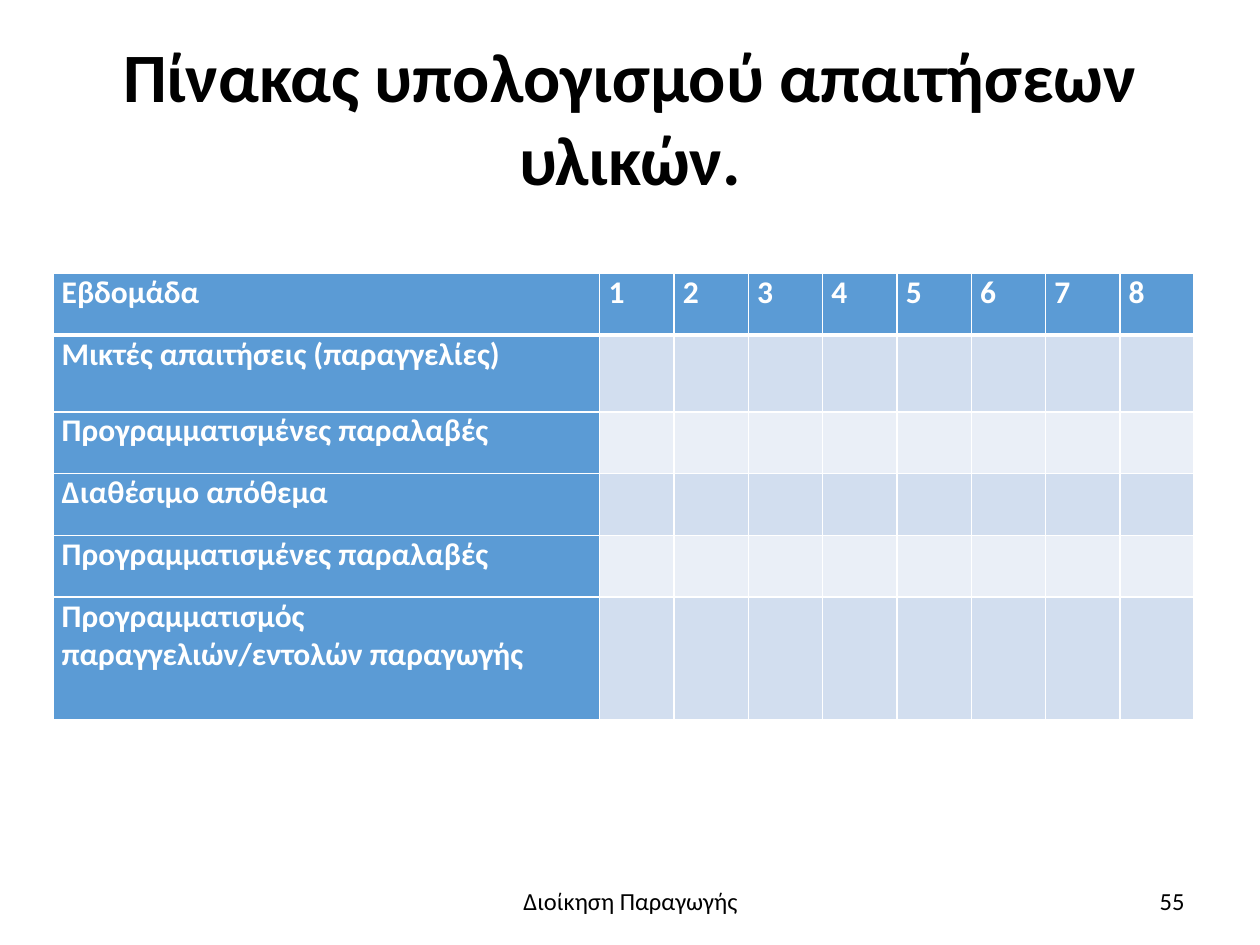
"""Build the material requirements planning table slide."""
from lxml.etree import SubElement
from pptx import Presentation
from pptx.dml.color import RGBColor
from pptx.enum.text import MSO_ANCHOR, PP_ALIGN
from pptx.oxml.ns import qn
from pptx.util import Inches, Pt

BLACK, WHITE, BLUE = "000000", "FFFFFF", "5B9BD5"
BANDS = ("D2DEEF", "EAEFF7")
WEEKS = 8
ROWS = [
    ("Εβδομάδα", 0.49),
    ("Μικτές απαιτήσεις (παραγγελίες)", 0.61),
    ("Προγραμματισμένες παραλαβές", 0.49),
    ("Διαθέσιμο απόθεμα", 0.49),
    ("Προγραμματισμένες παραλαβές", 0.49),
    ("Προγραμματισμός παραγγελιών/εντολών παραγωγής", 0.97),
]


def color(value):
    return RGBColor.from_string(value)


class SlideBuilder:
    def __init__(self, slide, font_name="Calibri"):
        self.slide = slide
        self.font_name = font_name

    def add_text(self, frame, text, size, ink, alignment, bold=False):
        frame.word_wrap = True
        paragraph = frame.paragraphs[0]
        paragraph.alignment = alignment
        run = paragraph.add_run()
        run.text = text
        run.font.name = self.font_name
        run.font.size = Pt(size)
        run.font.bold = bold
        run.font.color.rgb = color(ink)

    def title(self, text, left, top, width, height):
        shape = self.slide.shapes.title
        shape.left, shape.top = Inches(left), Inches(top)
        shape.width, shape.height = Inches(width), Inches(height)
        shape.text_frame.vertical_anchor = MSO_ANCHOR.MIDDLE
        self.add_text(shape.text_frame, text, 39.6, BLACK, PP_ALIGN.CENTER, True)

    def label(self, text, left, top, width, height, alignment):
        shape = self.slide.shapes.add_textbox(
            Inches(left), Inches(top), Inches(width), Inches(height))
        shape.text_frame.vertical_anchor = MSO_ANCHOR.MIDDLE
        self.add_text(shape.text_frame, text, 14, BLACK, alignment)

    def borders(self, cell, top, bottom):
        properties = cell._tc.get_or_add_tcPr()
        widths = {"a:lnL": 1, "a:lnR": 1, "a:lnT": top, "a:lnB": bottom}
        for index, (tag, width) in enumerate(widths.items()):
            line = SubElement(properties, qn(tag), w=str(Pt(width)))
            fill = SubElement(line, qn("a:solidFill"))
            SubElement(fill, qn("a:srgbClr"), val=WHITE)
            properties.insert(index, line)

    def cell(self, cell, text, fill, alignment):
        cell.fill.solid()
        cell.fill.fore_color.rgb = color(fill)
        cell.margin_left = cell.margin_right = Inches(0.07)
        cell.margin_top = cell.margin_bottom = 0
        if text:
            self.add_text(cell.text_frame, text, 18, WHITE, alignment, True)

    def table(self, rows, weeks, left, top, label_width, week_width):
        heights = [height for _, height in rows]
        table = self.slide.shapes.add_table(
            len(rows), weeks + 1, Inches(left), Inches(top),
            Inches(label_width + weeks * week_width), Inches(sum(heights))).table
        for index, column in enumerate(table.columns):
            column.width = Inches(week_width if index else label_width)
        for row_index, (label, height) in enumerate(rows):
            table.rows[row_index].height = Inches(height)
            last = row_index == len(rows) - 1
            alignment = PP_ALIGN.LEFT if last else PP_ALIGN.JUSTIFY
            for week in range(weeks + 1):
                header = row_index == 0 or week == 0
                heading = str(week) if row_index == 0 else ""
                text = label if week == 0 else heading
                fill = BLUE if header else BANDS[(row_index - 1) % 2]
                cell = table.cell(row_index, week)
                self.cell(cell, text, fill, alignment)
                self.borders(cell, 3 if row_index == 1 else 1,
                             3 if row_index == 0 else 1)


def main():
    presentation = Presentation()
    presentation.slide_width, presentation.slide_height = Inches(10), Inches(7.5)
    slide = presentation.slides.add_slide(presentation.slide_layouts[5])
    builder = SlideBuilder(slide)
    builder.title("Πίνακας υπολογισμού απαιτήσεων υλικών.", 0.5, 0.3, 9, 1.25)
    builder.table(ROWS, WEEKS, 0.42, 2.17, 4.34, 0.59)
    builder.label("Διοίκηση Παραγωγής", 3.42, 6.95, 3.17, 0.4, PP_ALIGN.CENTER)
    builder.label("55", 7.17, 6.95, 2.33, 0.4, PP_ALIGN.RIGHT)
    presentation.save("out.pptx")


if __name__ == "__main__":
    main()
